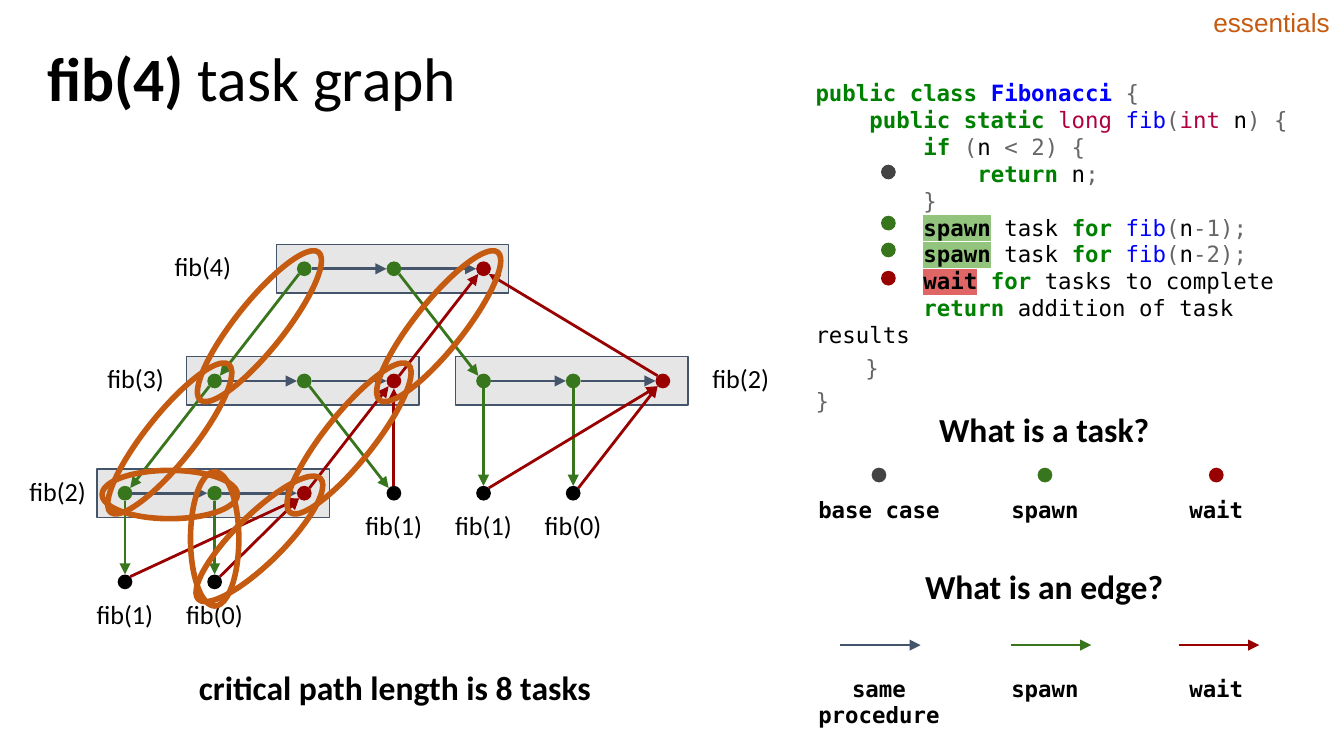
import math
from dataclasses import dataclass
from typing import NamedTuple

from lxml import etree
from pptx import Presentation, util as u
from pptx.dml.color import RGBColor
from pptx.enum import shapes, text
from pptx.oxml.ns import qn

COLORS = {
    "black": "000000", "base": "434343", "spawn": "38761D", "wait": "990000",
    "same": "44546A", "panel": "E7E6E6", "path": "C55A11", "tag": "C65A11",
    "keyword": "008000", "name": "0000FF", "type": "B00040", "sign": "666666",
    "spawn mark": "93C47D", "wait mark": "E06666",
}
MONO = "DejaVu Sans Mono"
DOT = 0.11
# Task graph grid: first centre and step, in inches
LEFT, TOP, COLUMN, ROW = 0.93, 2.0, 0.667, 0.835


class Node(NamedTuple):
    column: float
    row: float

    @property
    def x(self) -> float:
        return LEFT + self.column * COLUMN

    @property
    def y(self) -> float:
        return TOP + self.row * ROW


@dataclass
class Call:
    name: str
    first: Node
    label: Node


@dataclass
class Legend:
    label: str
    color: str
    center: float
    arrow_center: float
    edge_label: str
    width: float
    edge_width: float


class Span(NamedTuple):
    words: str
    color: str = "black"
    bold: bool = False
    mark: str = ""


deck = Presentation()
deck.slide_width, deck.slide_height = u.Inches(10), u.Inches(5.625)
page = deck.slides.add_slide(deck.slide_layouts[5])


def rgb(name: str) -> RGBColor:
    return RGBColor.from_string(COLORS[name])


def write(para, span: Span, size: float, font: str) -> None:
    run = para.add_run()
    run.text = span.words
    run.font.size, run.font.name, run.font.bold = u.Pt(size), font, span.bold
    run.font.color.rgb = rgb(span.color)
    if span.mark:
        highlight = etree.Element(qn("a:highlight"))
        etree.SubElement(highlight, qn("a:srgbClr")).set("val", COLORS[span.mark])
        run.font._element.find(qn("a:latin")).addprevious(highlight)


def add_text(words: str, left: float, top: float, width: float, height: float, *,
             size: float = 14, font: str = "Calibri", color: str = "black",
             bold: bool = False, center: bool = False, wrap: bool = True,
             inset: float = 0.1):
    box = page.shapes.add_textbox(*map(u.Inches, (left, top, width, height)))
    frame = box.text_frame
    frame.word_wrap = wrap
    frame.margin_top = frame.margin_bottom = u.Inches(inset)
    para = frame.paragraphs[0]
    para.alignment = text.PP_ALIGN.CENTER if center else text.PP_ALIGN.LEFT
    if words:
        write(para, Span(words, color, bold), size, font)
    return frame


def add_shape(kind, x: float, y: float, width: float, height: float, *,
              fill: str = "", line: str = "", weight: float = 0.75, turn: float = 0):
    """Place a shape by its centre."""
    shape = page.shapes.add_shape(kind, *map(
        u.Inches, (x - width / 2, y - height / 2, width, height)))
    shape.shadow.inherit = False
    shape.rotation = turn
    if fill:
        shape.fill.solid()
        shape.fill.fore_color.rgb = rgb(fill)
    else:
        shape.fill.background()
    if line:
        shape.line.color.rgb, shape.line.width = rgb(line), u.Pt(weight)
    else:
        shape.line.fill.background()


def add_dot(x: float, y: float, color: str) -> None:
    add_shape(shapes.MSO_SHAPE.OVAL, x, y, DOT, DOT, fill=color)


def add_arrow(x1: float, y1: float, x2: float, y2: float, color: str) -> None:
    arrow = page.shapes.add_connector(
        shapes.MSO_CONNECTOR.STRAIGHT, *map(u.Inches, (x1, y1, x2, y2)))
    arrow.line.color.rgb, arrow.line.width = rgb(color), u.Pt(1.5)
    etree.SubElement(arrow.line._get_or_add_ln(), qn("a:tailEnd")).set("type", "triangle")
    etree.SubElement(arrow._element.spPr, qn("a:effectLst"))


def add_edge(start: Node, end: Node, color: str) -> None:
    """Join the rims of two dots, at their sides or at their 45 degree points."""
    across, down = end.x - start.x, end.y - start.y
    reach = DOT / 2 * (math.sqrt(0.5) if across and down else 1)
    dx = math.copysign(reach, across) if across else 0
    dy = math.copysign(reach, down) if down else 0
    add_arrow(start.x + dx, start.y + dy, end.x - dx, end.y - dy, color)


def add_loop(start: Node, end: Node) -> None:
    across, down = end.x - start.x, end.y - start.y
    angle = math.degrees(math.atan2(down, across)) % 180
    add_shape(shapes.MSO_SHAPE.OVAL, (start.x + end.x) / 2, (start.y + end.y) / 2 + 0.01,
              math.hypot(across, down) + 0.34, 0.36, line="path", weight=3,
              turn=angle + 180 if angle > 90 else angle)


def add_label(words: str, node: Node, drop: float) -> None:
    add_text(words, node.x - 0.31, node.y + drop, 0.67, 0.47)


# Title
title = page.shapes.title
title.left, title.top, title.width, title.height = map(u.Inches, (0.28, 0, 9.44, 1.22))
frame = title.text_frame
frame.auto_size = text.MSO_AUTO_SIZE.NONE
frame.vertical_anchor = text.MSO_ANCHOR.MIDDLE
frame.margin_left = frame.margin_right = u.Inches(0.07)
para = frame.paragraphs[0]
para.alignment, para.line_spacing = text.PP_ALIGN.LEFT, 0.9
for span in (Span("fib(4)", bold=True), Span(" task graph")):
    write(para, span, 33, "Calibri")

# Code listing
def keyword(words: str) -> Span:
    return Span(words, "keyword", True)


def sign(words: str) -> Span:
    return Span(words, "sign")


def spawn_line(step: int) -> list[Span]:
    return [Span(" " * 8), Span("spawn", bold=True, mark="spawn mark"), Span(" task "),
            keyword("for "), Span("fib", "name"), sign("("), Span("n"), sign(f"-{step});")]


CODE = [
    [keyword("public class "), Span("Fibonacci ", "name", True), sign("{")],
    [Span(" " * 4), keyword("public static "), Span("long ", "type"), Span("fib", "name"),
     sign("("), Span("int", "type"), Span(" n"), sign(") {")],
    [Span(" " * 8), keyword("if "), sign("("), Span("n "), sign("< 2) {")],
    [Span(" " * 12), keyword("return"), Span(" n"), sign(";")],
    [sign(" " * 8 + "}")],
    spawn_line(1),
    spawn_line(2),
    [Span(" " * 8), Span("wait", bold=True, mark="wait mark"), Span(" "), keyword("for"),
     Span(" tasks to complete")],
    [Span(" " * 8), keyword("return"), Span(" addition of task results")],
    [sign("   }")],
    [sign("}")],
]
frame = add_text("", 5.97, 0.49, 3.84, 3.28)
for number, spans in enumerate(CODE):
    para = frame.add_paragraph() if number else frame.paragraphs[0]
    for span in spans:
        write(para, span, 12, MONO)
for para in frame.paragraphs[-2:]:
    para.line_spacing = 1.22
frame.paragraphs[-2]._p.get_or_add_pPr().set("marL", str(u.Inches(0.07)))
for y, color in ((1.28, "base"), (1.66, "spawn"), (1.86, "spawn"), (2.07, "wait")):
    add_dot(6.61, y, color)

# Task graph: calls with their three tasks
CALLS = [
    Call("fib(4)", Node(2, 0), Node(0.87, 0)),
    Call("fib(3)", Node(1, 1), Node(0.12, 1)),
    Call("fib(2)", Node(4, 1), Node(6.87, 1)),
    Call("fib(2)", Node(0, 2), Node(-0.75, 2)),
]
for call in CALLS:
    tasks = [Node(call.first.column + step, call.first.row) for step in range(3)]
    add_shape(shapes.MSO_SHAPE.RECTANGLE, tasks[1].x - 0.01, tasks[1].y, 1.73, 0.36,
              fill="panel", line="same")
    for task, color in zip(tasks, ("spawn", "spawn", "wait")):
        add_dot(task.x, task.y, color)
    for start, end in zip(tasks, tasks[1:]):
        add_edge(start, end, "same")
    add_label(call.name, call.label, -0.235)

# Base cases
LOW = 2.79
LEAVES = {Node(0, LOW): "fib(1)", Node(1, LOW): "fib(0)", Node(3, 2): "fib(1)",
          Node(4, 2): "fib(1)", Node(5, 2): "fib(0)"}
for leaf, name in LEAVES.items():
    add_dot(leaf.x, leaf.y, "black")
    add_label(name, leaf, 0.02)

# Spawn and wait edges
EDGES = {
    "spawn": [((2, 0), (1, 1)), ((3, 0), (4, 1)), ((1, 1), (0, 2)), ((2, 1), (3, 2)),
              ((4, 1), (4, 2)), ((5, 1), (5, 2)), ((0, 2), (0, LOW)), ((1, 2), (1, LOW))],
    "wait": [((0, LOW), (2, 2)), ((1, LOW), (2, 2)), ((2, 2), (3, 1)), ((3, 2), (3, 1)),
             ((4, 2), (6, 1)), ((5, 2), (6, 1)), ((6, 1), (4, 0)), ((3, 1), (4, 0))],
}
for color, pairs in EDGES.items():
    for start, end in pairs:
        add_edge(Node(*start), Node(*end), color)

# Critical path
PATH = [Node(2, 0), Node(1, 1), Node(0, 2), Node(1, 2), Node(1, LOW), Node(2, 2),
        Node(3, 1), Node(4, 0)]
for start, end in zip(PATH, PATH[1:]):
    add_loop(start, end)

# Headings
for words, left, top in (("What is a task?", 5.44, 2.94), ("What is an edge?", 5.44, 4.11),
                         ("critical path length is 8 tasks", 0.61, 4.86)):
    add_text(words, left, top, 4.66, 0.54, size=18, bold=True, center=True)

# Legends for tasks and edges
LEGENDS = [
    Legend("base case", "base", 6.54, 6.55, "same procedure", 1.38, 1.59),
    Legend("spawn ", "spawn", 7.775, 7.82, "spawn ", 0.79, 0.79),
    Legend("wait", "wait", 9.05, 9.07, "wait", 1.38, 1.38),
]
for item in LEGENDS:
    add_dot(item.center, 3.535, item.color)
    add_arrow(item.arrow_center - 0.3, 4.8, item.arrow_center + 0.3, 4.8,
              "same" if item.color == "base" else item.color)
    for words, top, width in ((item.label, 3.59, item.width),
                              (item.edge_label, 4.92, item.edge_width)):
        add_text(words, item.center - width / 2, top, width, 0.4, size=12, font=MONO,
                 bold=True, center=True)

# Corner tag
add_text("essentials", 8.93, 0, 1.07, 0.34, font="Arial", color="tag", wrap=False, inset=0.05)

deck.save("out.pptx")
